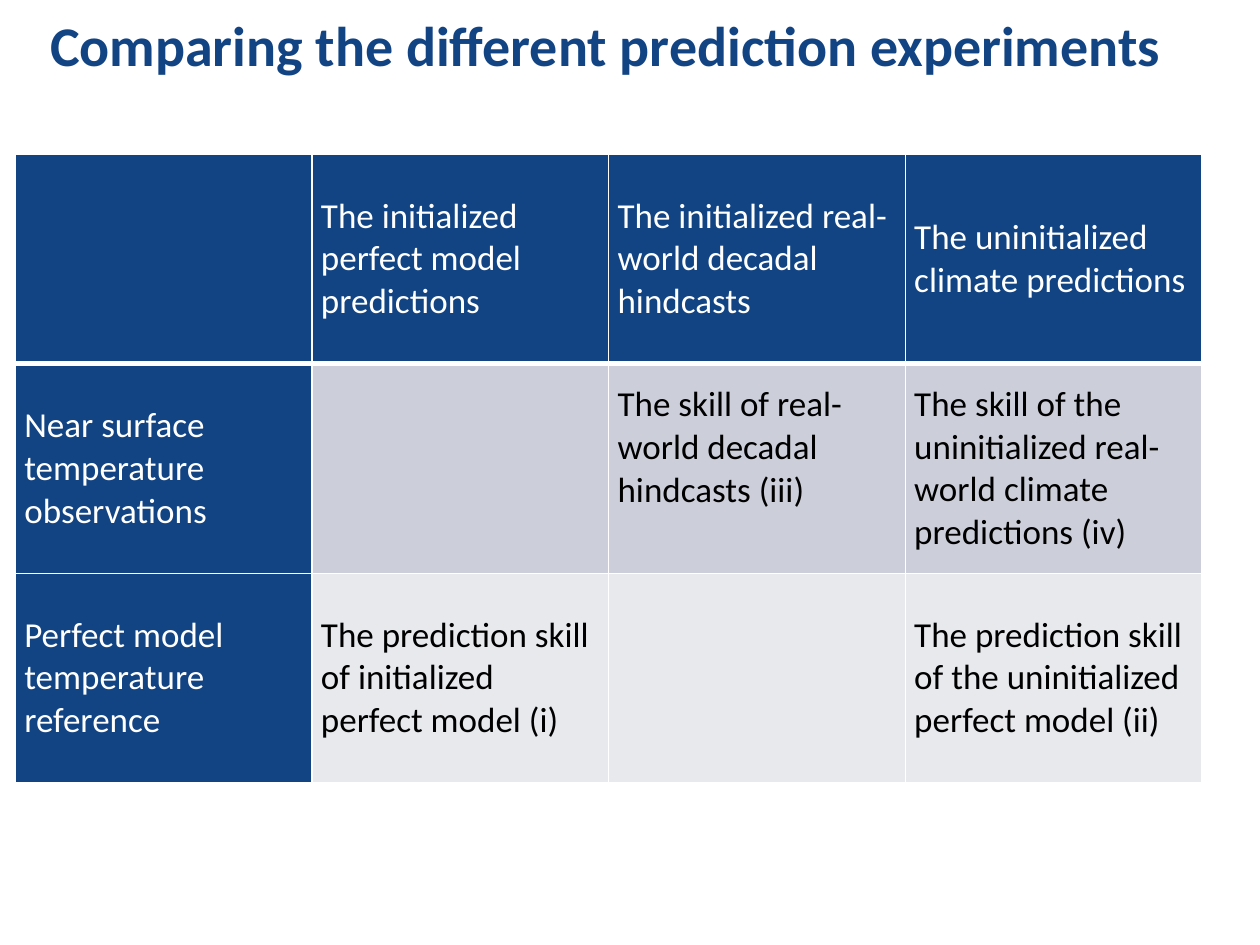
"""Build a slide that compares prediction experiments in a table."""
import lxml.etree
import pptx
import pptx.dml.color
import pptx.enum.text
import pptx.oxml.ns
import pptx.util

Cm = pptx.util.Cm
BLUE, WHITE, BLACK = "124484", "FFFFFF", "000000"
BAND_FILLS = ["CCCFD9", "E7E9ED"]
TITLE = "Comparing the different prediction experiments"
ROWS = [
    ["", "The initialized perfect model predictions",
     "The initialized real-world decadal hindcasts",
     "The uninitialized climate predictions"],
    ["Near surface temperature observations", "",
     "The skill of real-world decadal hindcasts (iii)",
     "The skill of the uninitialized real-world climate predictions (iv)"],
    ["Perfect model temperature reference",
     "The prediction skill of initialized perfect model (i)", "",
     "The prediction skill of the uninitialized perfect model (ii)"],
]
RAISED_CELL = (1, 2)


def color(value):
    """Turn a hex string into a colour."""
    return pptx.dml.color.RGBColor.from_string(value)


def write_text(frame, text, size=20, fill=BLACK, bold=False, line_spacing=None):
    """Write one formatted paragraph into a text frame."""
    frame.word_wrap = True
    paragraph = frame.paragraphs[0]
    paragraph.line_spacing = line_spacing
    run = paragraph.add_run()
    run.text = text
    run.font.name = "Calibri"
    run.font.size = pptx.util.Pt(size)
    run.font.bold = bold
    run.font.color.rgb = color(fill)


def set_borders(cell, bottom_width):
    """Draw white lines around a cell."""
    properties = cell._tc.get_or_add_tcPr()
    qualify = pptx.oxml.ns.qn
    for side in "LRTB":
        width = pptx.util.Pt(bottom_width if side == "B" else 1)
        line = lxml.etree.SubElement(properties, qualify(f"a:ln{side}"), w=str(width))
        solid = lxml.etree.SubElement(line, qualify("a:solidFill"))
        lxml.etree.SubElement(solid, qualify("a:srgbClr"), val=WHITE)


def add_title(slide, left, top, width, height):
    """Add the slide title in the given box."""
    shape = slide.shapes.add_textbox(left, top, width, height)
    shape.text_frame.vertical_anchor = pptx.enum.text.MSO_ANCHOR.MIDDLE
    write_text(shape.text_frame, TITLE, size=32, fill=BLUE, bold=True, line_spacing=0.9)


def add_comparison_table(slide, left, top, width, height):
    """Add the table of experiments and references in the given box."""
    shape = slide.shapes.add_table(len(ROWS), len(ROWS[0]), left, top, width, height)
    for row_index, texts in enumerate(ROWS):
        for column_index, text in enumerate(texts):
            cell = shape.table.cell(row_index, column_index)
            is_header = row_index == 0 or column_index == 0
            set_borders(cell, bottom_width=3 if row_index == 0 else 1)
            cell.fill.solid()
            cell.fill.fore_color.rgb = color(BLUE if is_header else BAND_FILLS[row_index - 1])
            cell.vertical_anchor = pptx.enum.text.MSO_ANCHOR.MIDDLE
            cell.margin_left = cell.margin_right = Cm(0.18)
            cell.margin_top = 0
            is_raised = (row_index, column_index) == RAISED_CELL
            cell.margin_bottom = Cm(0.86) if is_raised else 0
            if text:
                write_text(cell.text_frame, text, fill=WHITE if is_header else BLACK)


def main():
    """Build and save the presentation."""
    presentation = pptx.Presentation()
    presentation.slide_width, presentation.slide_height = Cm(25.4), Cm(19.05)
    slide = presentation.slides.add_slide(presentation.slide_layouts[6])
    add_title(slide, Cm(0.76), Cm(0.1), Cm(23.65), Cm(1.75))
    add_comparison_table(slide, Cm(0.31), Cm(3.11), Cm(23.92), Cm(12.67))
    presentation.save("out.pptx")


if __name__ == "__main__":
    main()
